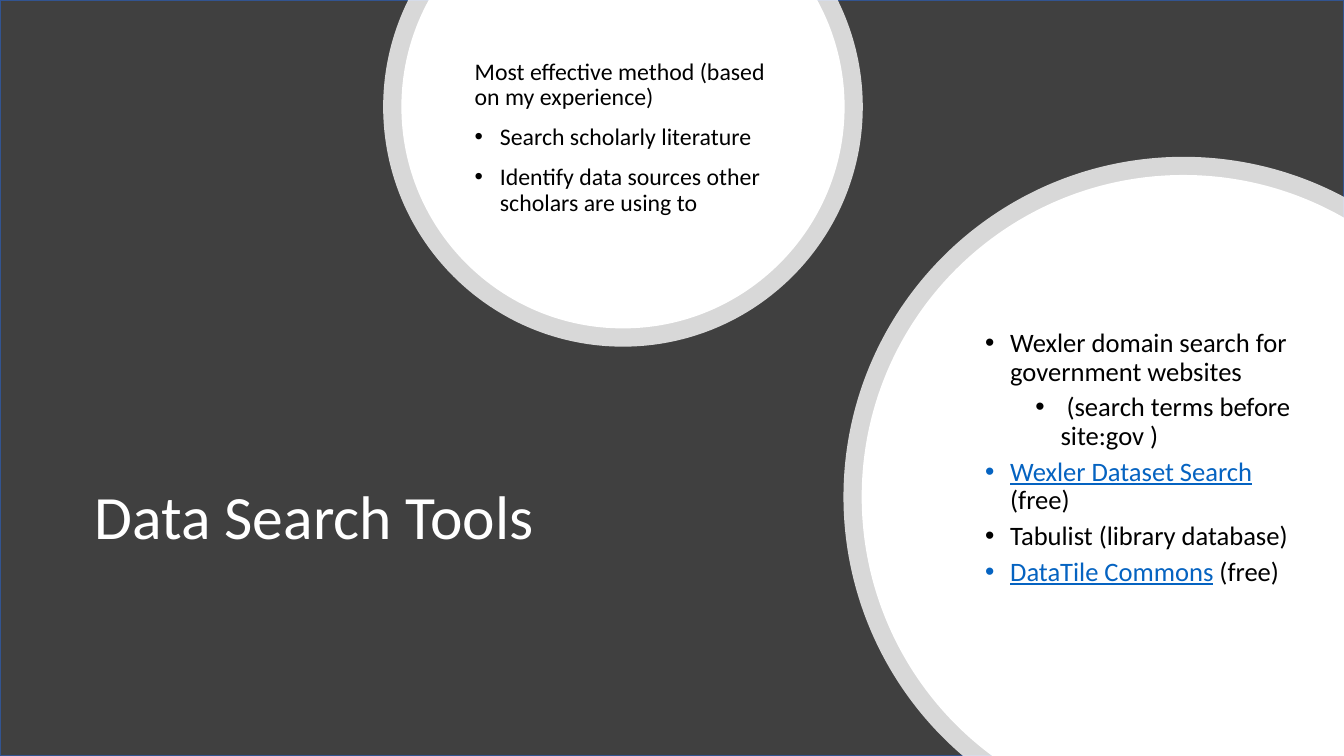
import math
from dataclasses import dataclass

import lxml.etree
import pptx
import pptx.dml.color
import pptx.enum.shapes
import pptx.enum.text
import pptx.oxml
import pptx.oxml.ns
import pptx.util

Pt = pptx.util.Pt
qn = pptx.oxml.ns.qn
WIDTH, HEIGHT = 960, 540
RING = 13


@dataclass(frozen=True)
class Theme:
    """Colours, typefaces and type sizes of the slide."""

    font: str = "Calibri"
    bullet_font: str = "Arial"
    backdrop: str = "404040"
    outline: str = "325491"
    white: str = "FFFFFF"
    text: str = "000000"
    link: str = "0563C1"
    title_size: int = 44
    method_size: int = 17
    tools_size: int = 19


THEME = Theme()


def rgb(value):
    """Turn a hex string into a colour."""
    return pptx.dml.color.RGBColor.from_string(value)


def set_fill(shape, color, alpha=None):
    """Give a shape a solid fill, optionally see-through, and no shadow."""
    shape.shadow.inherit = False
    shape.fill.solid()
    shape.fill.fore_color.rgb = rgb(color)
    if alpha is not None:
        color_element = shape.fill._xPr.find(".//" + qn("a:srgbClr"))
        lxml.etree.SubElement(color_element, qn("a:alpha")).set("val", str(alpha * 1000))


def add_backdrop(slide, left, top, width, height):
    """Cover the given box with the dark backdrop."""
    shape = slide.shapes.add_shape(
        pptx.enum.shapes.MSO_SHAPE.RECTANGLE, Pt(left), Pt(top), Pt(width), Pt(height))
    set_fill(shape, THEME.backdrop)
    shape.line.color.rgb = rgb(THEME.outline)
    shape.line.width = Pt(1)


def curve_points(center, radius, start, end):
    """Return the two handles and the end point of one circular arc."""
    reach = 4 / 3 * math.tan((end - start) / 4)
    (first_x, first_y), (last_x, last_y) = [
        (math.cos(angle), math.sin(angle)) for angle in (start, end)]
    offsets = [
        (first_x - reach * first_y, first_y + reach * first_x),
        (last_x + reach * last_y, last_y - reach * last_x),
        (last_x, last_y),
    ]
    return [(Pt(center[0] + radius * x), Pt(center[1] + radius * y)) for x, y in offsets]


def add_clipped_circle(slide, center, radius, start, end, corners, alpha=None):
    """Draw a white circle as arcs between two angles, closed through corners."""
    quarters = [math.pi / 2 * step for step in range(4)]
    angles = [start, *(angle for angle in quarters if start < angle < end), end]
    curves = [curve_points(center, radius, *pair) for pair in zip(angles, angles[1:])]
    builder = slide.shapes.build_freeform(
        Pt(center[0] + radius * math.cos(start)), Pt(center[1] + radius * math.sin(start)))
    builder.add_line_segments(
        [curve[-1] for curve in curves] + [(Pt(x), Pt(y)) for x, y in corners], close=True)
    shape = builder.convert_to_shape()
    for line, curve in zip(list(shape._element.iter(qn("a:lnTo"))), curves):
        bezier = lxml.etree.Element(qn("a:cubicBezTo"))
        for x, y in curve:
            point = lxml.etree.SubElement(bezier, qn("a:pt"))
            point.set("x", str(x - shape.left))
            point.set("y", str(y - shape.top))
        line.getparent().replace(line, bezier)
    set_fill(shape, THEME.white, alpha)
    shape.line.fill.background()


def add_top_circle(slide, center, radius, alpha=None):
    """Draw a circle cut off by the top edge."""
    cut = math.asin(center[1] / radius)
    add_clipped_circle(slide, center, radius, -cut, math.pi + cut, [], alpha)


def add_corner_circle(slide, center, radius, alpha=None):
    """Draw a circle cut off by the bottom and right edges."""
    start = math.pi - math.asin((HEIGHT - center[1]) / radius)
    end = 2 * math.pi - math.acos((WIDTH - center[0]) / radius)
    add_clipped_circle(slide, center, radius, start, end, [(WIDTH, HEIGHT)], alpha)


def add_ringed_circle(slide, add_circle, center, radius):
    """Draw a white circle inside a translucent ring."""
    add_circle(slide, center, radius, alpha=80)
    add_circle(slide, center, radius - RING)


def add_bullet(paragraph, indent):
    """Hang a round bullet before the paragraph at the given indent."""
    properties = paragraph._p.get_or_add_pPr()
    properties.set("marL", str(Pt(indent)))
    properties.set("indent", str(Pt(-18)))
    lxml.etree.SubElement(properties, qn("a:buFont")).set("typeface", THEME.bullet_font)
    lxml.etree.SubElement(properties, qn("a:buChar")).set("char", "•")


def add_text(slide, box, items, size, color, gap=0):
    """Fill a box with (indent, pieces) paragraphs, the first of two pieces a link."""
    frame = slide.shapes.add_textbox(*map(Pt, box)).text_frame
    frame.word_wrap = True
    frame.vertical_anchor = pptx.enum.text.MSO_ANCHOR.MIDDLE
    for index, (indent, pieces) in enumerate(items):
        paragraph = frame.paragraphs[0] if index == 0 else frame.add_paragraph()
        paragraph.line_spacing = 0.9
        if index:
            paragraph.space_before = Pt(gap)
        if indent:
            add_bullet(paragraph, indent)
        paragraph.font.name = THEME.font
        paragraph.font.size = Pt(size)
        linked = len(pieces) > 1
        if not linked:
            paragraph.font.color.rgb = rgb(color)
        for position, piece in enumerate(pieces):
            run = paragraph.add_run()
            run.text = piece
            if linked:
                run.font.color.rgb = rgb(color if position else THEME.link)
                run.font.underline = position == 0


def add_title(slide, left, top, width, height):
    """Place the slide title in the given box."""
    add_text(slide, (left, top, width, height), [(0, ["Data Search Tools"])],
             THEME.title_size, THEME.white)


def add_method(slide, center_x, center_y, radius):
    """Draw the upper circle with the recommended method."""
    add_ringed_circle(slide, add_top_circle, (center_x, center_y), radius)
    items = [
        (0, ["Most effective method (based on my experience)"]),
        (18, ["Search scholarly literature"]),
        (18, ["Identify data sources other scholars are using to"]),
    ]
    box = (center_x - 113, center_y - 48.2, 227, 141)
    add_text(slide, box, items, THEME.method_size, THEME.text, gap=10)


def add_tools(slide, center_x, center_y, radius):
    """Draw the right circle with the list of search tools."""
    add_ringed_circle(slide, add_corner_circle, (center_x, center_y), radius)
    items = [
        (54, ["Wexler domain search for government websites"]),
        (90, [" (search terms before site:gov )"]),
        (54, ["Wexler Dataset Search", " (free)"]),
        (54, ["Tabulist (library database)"]),
        (54, ["DataTile Commons", " (free)"]),
    ]
    box = (center_x - 185, center_y - 127.7, 276, 200)
    add_text(slide, box, items, THEME.tools_size, THEME.text, gap=5)


def main():
    """Build the slide and save it."""
    presentation = pptx.Presentation()
    presentation.slide_width = Pt(WIDTH)
    presentation.slide_height = Pt(HEIGHT)
    slide = presentation.slides.add_slide(presentation.slide_layouts[6])
    add_backdrop(slide, 0, 0, WIDTH, HEIGHT)
    add_title(slide, 60.5, 275.4, 477, 191)
    add_method(slide, 445, 76.3, 171.3)
    add_tools(slide, 845.5, 355, 243)
    presentation.save("out.pptx")


if __name__ == "__main__":
    main()
